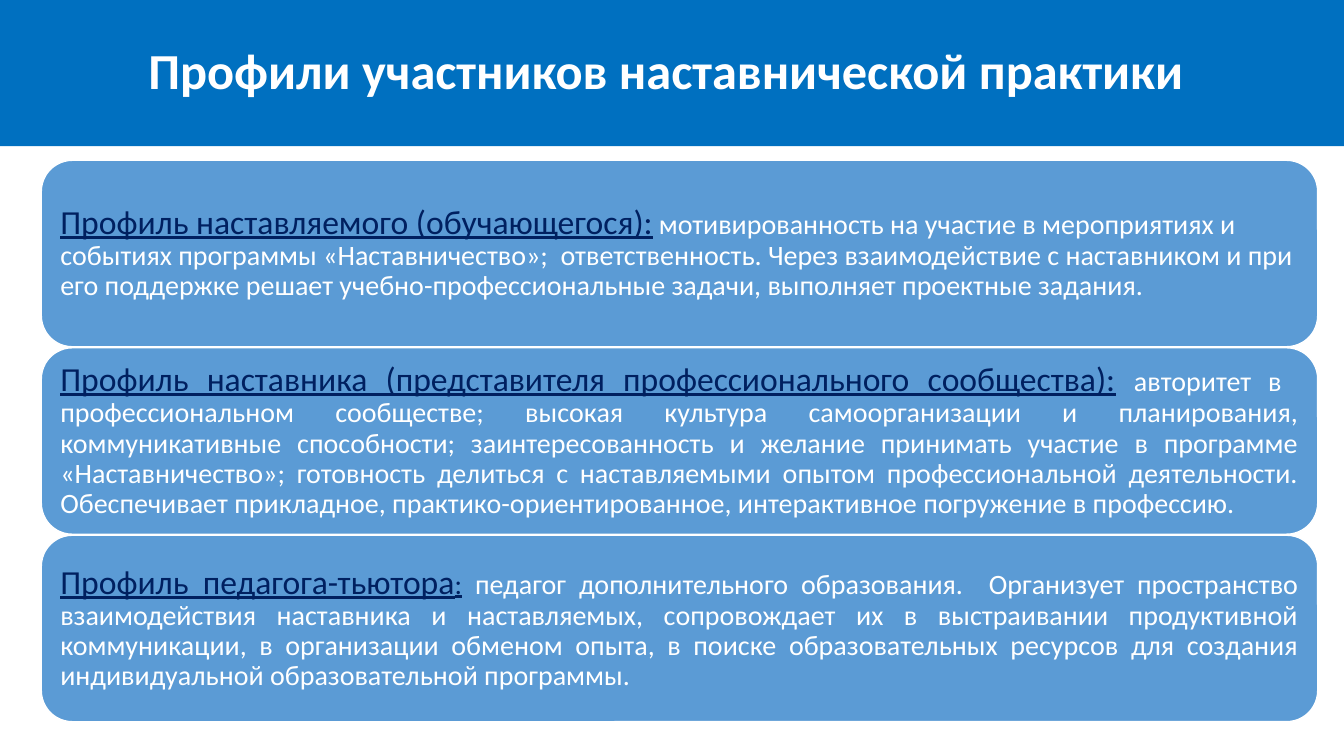
from dataclasses import dataclass

from pptx import Presentation
from pptx.dml.color import RGBColor
from pptx.enum.shapes import MSO_SHAPE
from pptx.enum.text import MSO_ANCHOR, MSO_AUTO_SIZE, PP_ALIGN
from pptx.util import Inches, Pt

ROUND = MSO_SHAPE.ROUNDED_RECTANGLE
MIDDLE = MSO_ANCHOR.MIDDLE
FIXED = MSO_AUTO_SIZE.NONE
LEFT, CENTER, JUSTIFY = PP_ALIGN.LEFT, PP_ALIGN.CENTER, PP_ALIGN.JUSTIFY


@dataclass(frozen=True)
class Theme:
    font: str = "Calibri"
    band: RGBColor = RGBColor(0x00, 0x70, 0xC0)
    card: RGBColor = RGBColor(0x5B, 0x9B, 0xD5)
    navy: RGBColor = RGBColor(0x00, 0x20, 0x60)
    white: RGBColor = RGBColor(0xFF, 0xFF, 0xFF)
    title: int = 36
    head: int = 24
    body: int = 20
    small: int = 19


theme = Theme()


def set_frame(frame, align):
    frame.word_wrap = True
    frame.auto_size = FIXED
    frame.vertical_anchor = MIDDLE
    para = frame.paragraphs[0]
    para.alignment = align
    para.line_spacing = 0.9
    return para


def add_run(para, text, size, color, bold=False, under=False):
    run = para.add_run()
    run.text = text
    run.font.name = theme.font
    run.font.size = Pt(size)
    run.font.color.rgb = color
    run.font.bold = bold
    run.font.underline = under


# Slide
prs = Presentation()
prs.slide_width, prs.slide_height = Inches(13.33), Inches(7.5)
slide = prs.slides.add_slide(prs.slide_layouts.get_by_name("Title Only"))

# Title band
title = slide.shapes.title
title.left, title.top = Inches(0), Inches(0)
title.width, title.height = prs.slide_width, Inches(1.45)
title.fill.solid()
title.fill.fore_color.rgb = theme.band
para = set_frame(title.text_frame, CENTER)
add_run(para, "Профили участников наставнической практики ",
        theme.title, theme.white, bold=True)

# Profiles: alignment, then heading, joint and text with the joint's look
cards = [
    (LEFT, "Профиль наставляемого (обучающегося):",
     (" ", theme.small, theme.white, False),
     "мотивированность на участие в мероприятиях и событиях программы "
     "«Наставничество»;  ответственность. Через взаимодействие с наставником "
     "и при его поддержке решает учебно-профессиональные задачи, выполняет "
     "проектные задания."),
    (JUSTIFY, "Профиль наставника (представителя профессионального сообщества):",
     (" ", theme.head, theme.white, False),
     "авторитет в  профессиональном сообществе; высокая культура "
     "самоорганизации и планирования, коммуникативные способности; "
     "заинтересованность и желание принимать участие в программе "
     "«Наставничество»; готовность делиться с наставляемыми опытом "
     "профессиональной деятельности. Обеспечивает прикладное, "
     "практико-ориентированное, интерактивное погружение в профессию."),
    (JUSTIFY, "Профиль педагога-тьютора",
     (":", theme.body, theme.navy, True),
     " педагог дополнительного образования.  Организует пространство "
     "взаимодействия наставника и наставляемых, сопровождает их в "
     "выстраивании продуктивной коммуникации, в организации обменом опыта, "
     "в поиске образовательных ресурсов для создания индивидуальной "
     "образовательной программы."),
]

# Stack of rounded cards
for row, (align, head, (joint, size, color, under), body) in enumerate(cards):
    card = slide.shapes.add_shape(ROUND, Inches(0.41), Inches(1.59 + 1.86 * row),
                                  Inches(12.66), Inches(1.85))
    card.shadow.inherit = False
    card.fill.solid()
    card.fill.fore_color.rgb = theme.card
    card.line.color.rgb = theme.white
    card.line.width = Pt(1)

    frame = card.text_frame
    frame.margin_left = frame.margin_right = Inches(0.1)
    frame.margin_top = frame.margin_bottom = Inches(0.1)
    para = set_frame(frame, align)
    add_run(para, head, theme.head, theme.navy, under=True)
    add_run(para, joint, size, color, under=under)
    add_run(para, body, theme.body, theme.white)

prs.save("out.pptx")
